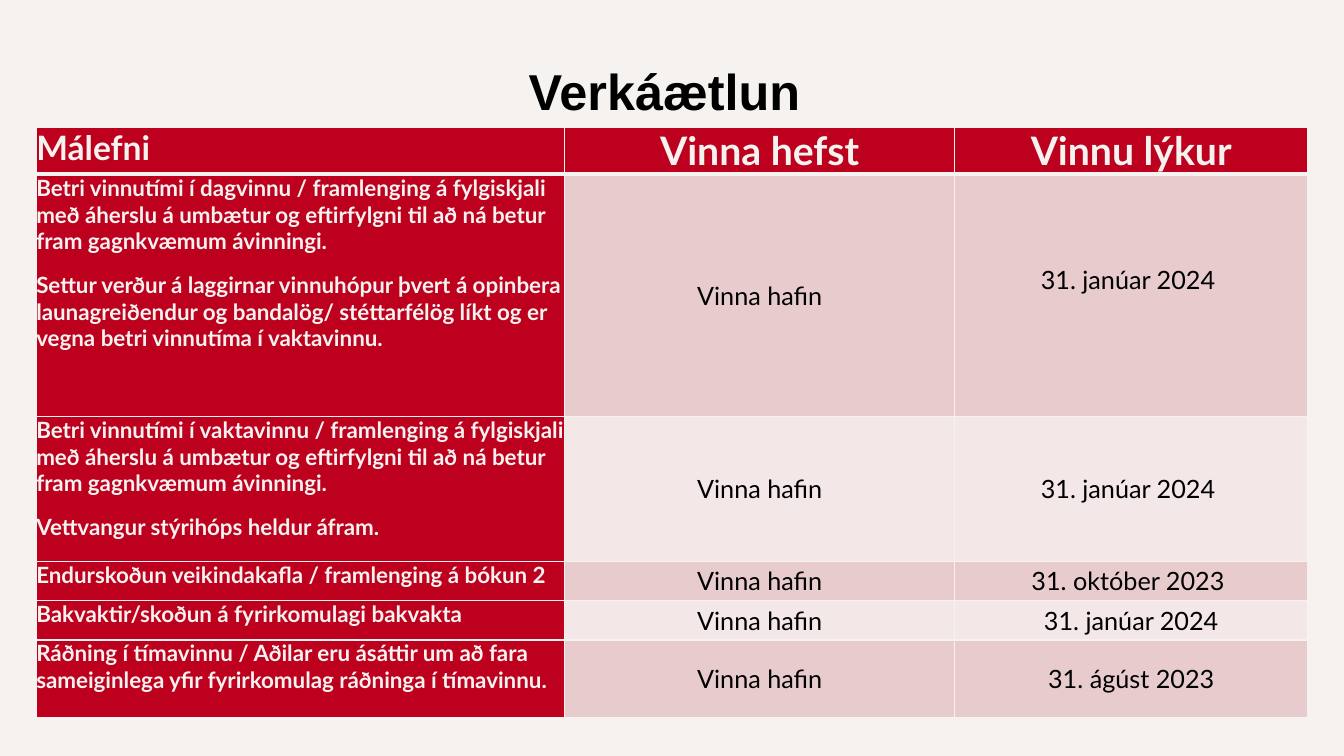
from pptx import Presentation, util as u
from pptx.dml.color import RGBColor
from pptx.enum import text
from pptx.oxml import parse_xml
from pptx.oxml.ns import nsdecls

RED = RGBColor(0xBD, 0x00, 0x1D)
PALE = RGBColor(0xF5, 0xF2, 0xF0)
BLACK = RGBColor(0, 0, 0)
BANDS = [RGBColor(0xE8, 0xCC, 0xCD), RGBColor(0xF4, 0xE7, 0xE8)]

TITLE = "Verkáætlun "
HEADS = ["Málefni", "Vinna hefst", "Vinnu lýkur"]
BEGUN = "Vinna hafin"
TASKS = [
    (["Betri vinnutími í dagvinnu / framlenging á fylgiskjali með áherslu á umbætur og "
      "eftirfylgni til að ná betur fram gagnkvæmum ávinningi.",
      "Settur verður á laggirnar vinnuhópur þvert á opinbera launagreiðendur og bandalög/ "
      "stéttarfélög líkt og er vegna betri vinnutíma í vaktavinnu."],
     "31. janúar 2024 "),
    (["Betri vinnutími í vaktavinnu / framlenging á fylgiskjali með áherslu á umbætur og "
      "eftirfylgni til að ná betur fram gagnkvæmum ávinningi.",
      "Vettvangur stýrihóps heldur áfram."],
     "31. janúar 2024 "),
    (["Endurskoðun veikindakafla / framlenging á bókun 2"], "31. október 2023 "),
    (["Bakvaktir/skoðun á fyrirkomulagi bakvakta"], "31. janúar 2024"),
    (["Ráðning í tímavinnu / Aðilar eru ásáttir um að fara sameiginlega yfir "
      "fyrirkomulag ráðninga í tímavinnu."], "31. ágúst 2023"),
]
COLS = [5.24, 3.87, 3.5]
ROWS = [0.47, 2.4, 1.44, 0.39, 0.39, 0.77]
LEFT, TOP = 0.36, 1.26

BOLD = dict(name="Lato", size=u.Pt(16), bold=True)
HEAD = dict(BOLD, size=u.Pt(28))
FIRST = dict(BOLD, size=u.Pt(24))
BODY = dict(name="Lato", size=u.Pt(18), bold=False)


def put(obj, vals):
    for key, val in vals.items():
        setattr(obj, key, val)


def write(frame, lines, font, color, form):
    frame.text = "\n".join(lines)
    for par in frame.paragraphs:
        put(par, form)
        for run in par.runs:
            put(run.font, font)
            run.font.color.rgb = color


def edge(cell, side, width):
    return parse_xml(
        f'<a:{side} {nsdecls("a")} w="{u.Pt(width)}"><a:solidFill>'
        f'<a:srgbClr val="{PALE}"/></a:solidFill></a:{side}>')


def style(cell, fill, row):
    put(cell, dict.fromkeys(
        ["margin_left", "margin_right", "margin_top", "margin_bottom"], 0))
    widths = dict(lnL=1, lnR=1, lnT=3 if row == 1 else 1, lnB=3 if row == 0 else 1)
    props = cell._tc.get_or_add_tcPr()
    for side, width in widths.items():
        props.append(edge(cell, side, width))
    cell.fill.solid()
    cell.fill.fore_color.rgb = fill


def main():
    deck = Presentation()
    put(deck, dict(slide_width=u.Inches(13.33), slide_height=u.Inches(7.5)))
    slide = deck.slides.add_slide(deck.slide_layouts[5])
    slide.background.fill.solid()
    slide.background.fill.fore_color.rgb = PALE

    mid = text.PP_ALIGN.CENTER
    title = slide.shapes.title
    put(title, dict(left=u.Inches(0.56), top=u.Inches(0.73),
                    width=u.Inches(12.2), height=u.Inches(0.53)))
    write(title.text_frame, [TITLE], dict(name="Arial", size=u.Pt(36), bold=True),
          BLACK, dict(alignment=mid, line_spacing=0.9))
    put(title.text_frame, dict(vertical_anchor=text.MSO_ANCHOR.BOTTOM, word_wrap=True))

    sizes = [u.Inches(n) for n in (LEFT, TOP, sum(COLS), sum(ROWS))]
    table = slide.shapes.add_table(len(ROWS), len(COLS), *sizes).table
    put(table, dict(first_col=True, horz_banding=False))
    for col, width in zip(table.columns, COLS):
        col.width = u.Inches(width)
    for row, height in zip(table.rows, ROWS):
        row.height = u.Inches(height)

    grid = [[[head] for head in HEADS]]
    grid += [[topic, [BEGUN], [end]] for topic, end in TASKS]
    for r, row in enumerate(grid):
        for c, lines in enumerate(row):
            cell = table.cell(r, c)
            dark = r == 0 or c == 0
            style(cell, RED if dark else BANDS[(r - 1) % 2], r)
            if r == 0:
                font = HEAD if c else FIRST
            else:
                font = BODY if c else BOLD
            form = (dict(alignment=mid, space_after=u.Pt(6)) if c
                    else dict(space_before=u.Pt(12)))
            write(cell.text_frame, lines, font, PALE if dark else BLACK, form)
            cell.vertical_anchor = text.MSO_ANCHOR.MIDDLE if c else text.MSO_ANCHOR.TOP
    table.cell(1, 2).margin_bottom = u.Inches(0.3)
    deck.save("out.pptx")


if __name__ == "__main__":
    main()
